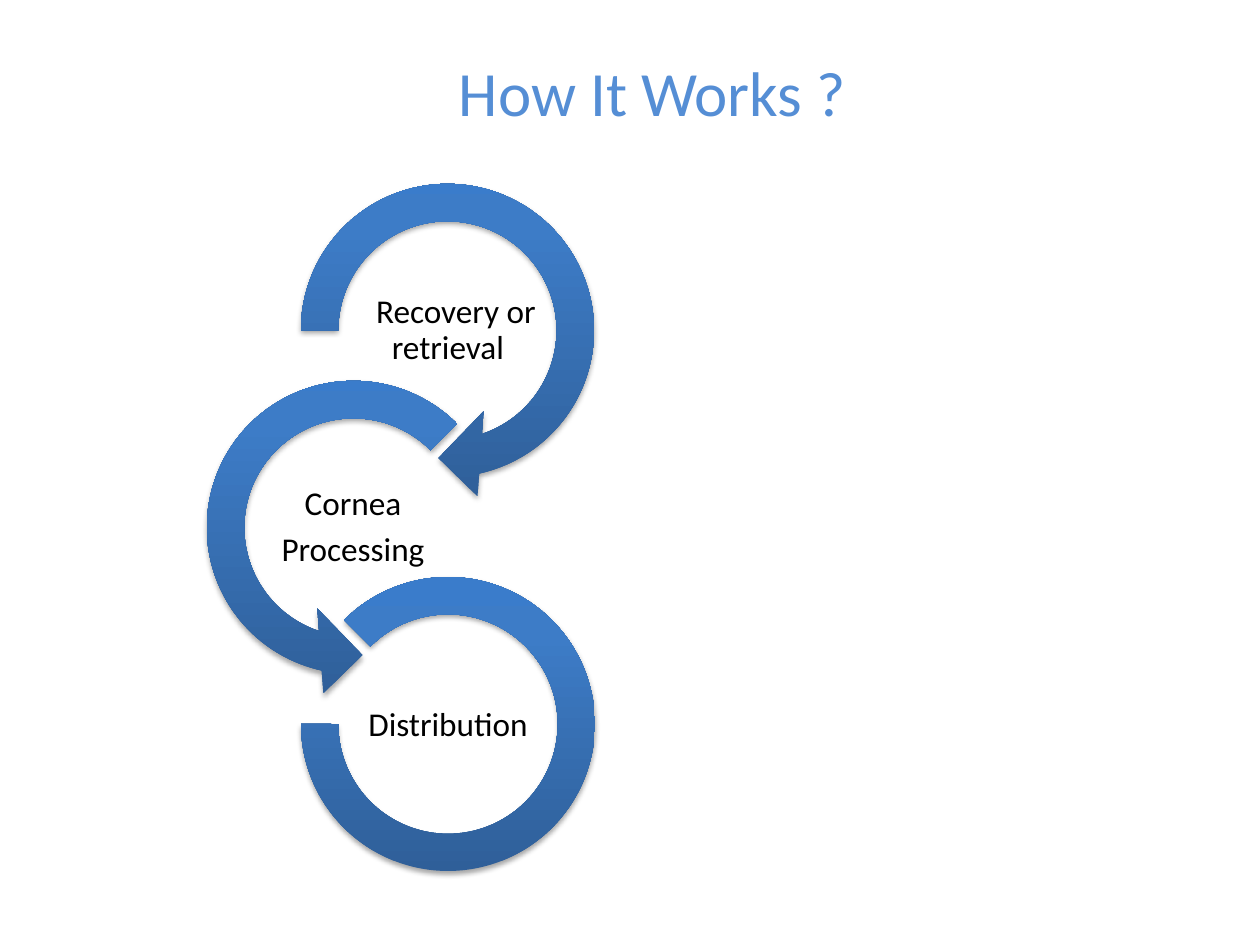
from copy import deepcopy
from pptx import Presentation
from pptx import util as u
from pptx.dml.color import RGBColor
from pptx.enum import shapes, text
from pptx.oxml import parse_xml
from pptx.oxml.ns import nsdecls, qn

PX = 914400 / 126
GRADIENT = [(0, "2F5F99"), (0.8, "3D7CC7"), (1, "3A7CCB")]
SHADOW = (
    f'<a:effectLst {nsdecls("a")}>'
    '<a:outerShdw blurRad="39370" dist="22860" dir="5400000" rotWithShape="0">'
    '<a:srgbClr val="000000"><a:alpha val="35000"/></a:srgbClr>'
    '</a:outerShdw></a:effectLst>'
)


def box(*lengths):
    return [round(n * PX) for n in lengths]


def add_text(parent, bounds, lines, size, color):
    tf = parent.add_textbox(*box(*bounds)).text_frame
    tf.word_wrap = True
    for i, line in enumerate(lines):
        p = tf.paragraphs[0] if i == 0 else tf.add_paragraph()
        p.alignment = text.PP_ALIGN.CENTER
        r = p.add_run()
        r.text = line
        r.font.name = "Calibri"
        r.font.size = u.Pt(size)
        r.font.color.rgb = RGBColor.from_string(color)
    return tf


prs = Presentation()
prs.slide_width, prs.slide_height = box(1260, 945)
s = prs.slides.add_slide(prs.slide_layouts[6])

# Chain of circular steps: shape, bounds, adjustments, label position, lines, first-line indent
kind = shapes.MSO_SHAPE
steps = [
    (kind.CIRCULAR_ARROW, (277, 160, 341, 341), (0.11, 11.42, 45, 108, 0.125),
     (353, 284), ["Recovery or retrieval"], 16),
    (kind.LEFT_CIRCULAR_ARROW, (183, 357, 341, 341), (0.11, 11.42, 63, 189, 0.125),
     (258, 481), ["Cornea", "Processing"], 0),
    (kind.BLOCK_ARC, (301, 577, 294, 294), (135, 108, 0.127),
     (353, 679), ["Distribution"], 0),
]
chain = s.shapes.add_group_shape()
for preset, bounds, adjustments, label_at, lines, indent in steps:
    sp = chain.shapes.add_shape(preset, *box(*bounds))
    for i, value in enumerate(adjustments):
        sp.adjustments[i] = value
    sp.line.fill.background()

    # Three-stop gradient, running upwards
    sp.fill.gradient()
    sp.fill.gradient_angle = 90
    stops = sp.fill.gradient_stops
    stop_list = sp._element.spPr.find(".//" + qn("a:gsLst"))
    stop_list.append(deepcopy(stop_list[-1]))
    stops = sp.fill.gradient_stops
    for stop, (position, color) in zip(stops, GRADIENT):
        stop.position = position
        stop.color.rgb = RGBColor.from_string(color)
    sp._element.spPr.append(parse_xml(SHADOW))

    # Label inside the ring
    tf = add_text(chain.shapes, (*label_at, 190, 94), lines, 19, "000000")
    tf.vertical_anchor = text.MSO_ANCHOR.MIDDLE
    tf.margin_left = tf.margin_right = tf.margin_top = tf.margin_bottom = u.Inches(0.01)
    for p in tf.paragraphs:
        p.line_spacing = 0.9
        p.space_after = u.Pt(6)
        if indent:
            p._p.get_or_add_pPr().set("indent", str(round(indent * PX)))

# Title
tf = add_text(s.shapes, (180, 47, 945, 89), ["How It Works ?"], 36, "558ED5")
tf.auto_size = text.MSO_AUTO_SIZE.SHAPE_TO_FIT_TEXT

prs.save("out.pptx")
